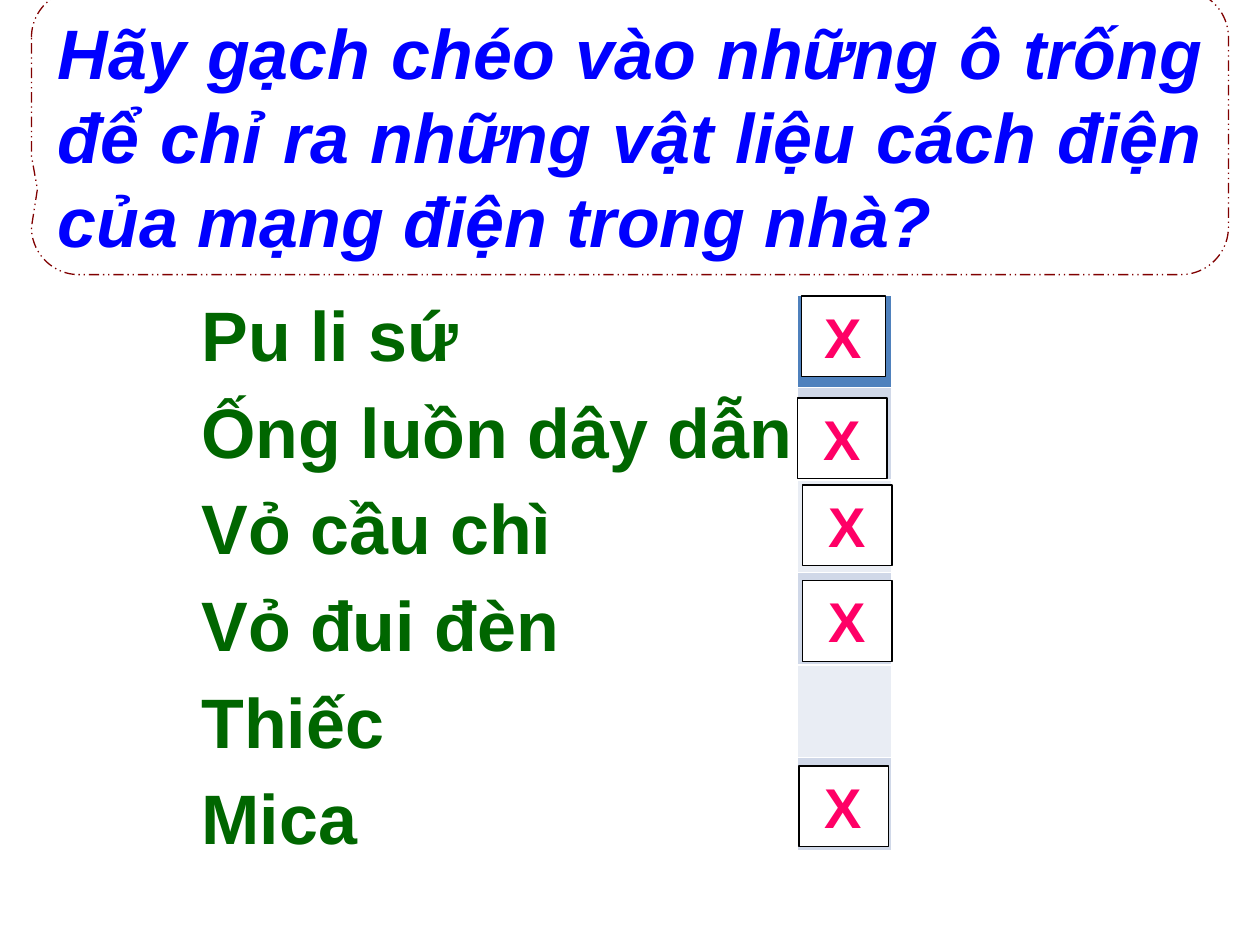
from pptx import Presentation
from pptx.dml.color import RGBColor
from pptx.enum.dml import MSO_LINE
from pptx.enum.shapes import MSO_SHAPE
from pptx.enum.text import MSO_ANCHOR, MSO_AUTO_SIZE, PP_ALIGN
from pptx.util import Inches, Pt

WHITE = RGBColor(0xFF, 0xFF, 0xFF)
BLACK = RGBColor(0, 0, 0)
MAROON = RGBColor(0x80, 0, 0)
BLUE = RGBColor(0, 0, 0xFF)
GREEN = RGBColor(0, 0x66, 0)
PINK = RGBColor(0xFF, 0, 0x66)
HEAD = RGBColor(0x4F, 0x81, 0xBD)
BANDS = [RGBColor(0xE9, 0xED, 0xF4), RGBColor(0xD0, 0xD8, 0xE8)]

QUESTION = ("Hãy gạch chéo vào những ô trống để chỉ ra những "
            "vật liệu cách điện của mạng điện trong nhà?")
ITEMS = ["Pu li sứ", "Ống luồn dây dẫn", "Vỏ cầu chì",
         "Vỏ đui đèn", "Thiếc", "Mica"]
# Left, top and width of each cross, measured from the answer column
CROSSES = [(0.03, 0.01, 0.67), (0, 0.82, 0.71), (0.04, 1.51, 0.71),
           (0.04, 2.27, 0.71), (0.01, 3.74, 0.71)]


def write(frame, text, size, color, align=PP_ALIGN.LEFT, italic=False):
    frame.text = text
    para = frame.paragraphs[0]
    para.alignment = align
    font = para.runs[0].font
    font.name, font.size, font.bold = "Arial", Pt(size), True
    font.italic = italic
    font.color.rgb = color


def add_box(slide, kind, box, line):
    shape = slide.shapes.add_shape(kind, *map(Inches, box))
    shape.shadow.inherit = False
    shape.fill.solid()
    shape.fill.fore_color.rgb = WHITE
    shape.line.color.rgb = line
    shape.line.width = Pt(0.75)
    shape.text_frame.word_wrap = True
    shape.text_frame.vertical_anchor = MSO_ANCHOR.TOP
    return shape


def add_grid(slide, box, widths):
    """Add a table with one equal row for each item."""
    grid = slide.shapes.add_table(len(ITEMS), len(widths),
                                  *map(Inches, box)).table
    for col, width in zip(grid.columns, widths):
        col.width = Inches(width)
    return grid


def add_question(slide, box):
    shape = add_box(slide, MSO_SHAPE.ROUNDED_RECTANGULAR_CALLOUT, box, MAROON)
    for i, value in enumerate((-0.495, 0.2, 0.167)):
        shape.adjustments[i] = value
    shape.line.dash_style = MSO_LINE.DASH_DOT_DOT
    write(shape.text_frame, QUESTION, 40, BLUE, PP_ALIGN.JUSTIFY, True)


def add_items(slide, box):
    grid = add_grid(slide, box, (5.05, 1.3))
    grid.first_row = grid.horz_banding = False
    for cell in grid.iter_cells():
        cell.fill.background()
    for row, item in enumerate(ITEMS):
        write(grid.cell(row, 0).text_frame, item, 40, GREEN)


def add_answers(slide, box):
    grid = add_grid(slide, box, (box[2],))
    for row, cell in enumerate(grid.iter_cells()):
        cell.fill.solid()
        cell.fill.fore_color.rgb = BANDS[row % 2] if row else HEAD
    left, top = box[:2]
    for dx, dy, width in CROSSES:
        cross = add_box(slide, MSO_SHAPE.RECTANGLE,
                        (left + dx, top + dy, width, 0.64), BLACK)
        write(cross.text_frame, "X", 32, PINK, PP_ALIGN.CENTER)
        cross.text_frame.auto_size = MSO_AUTO_SIZE.SHAPE_TO_FIT_TEXT


def main():
    deck = Presentation()
    deck.slide_width, deck.slide_height = Inches(10), Inches(7.5)
    slide = deck.slides.add_slide(deck.slide_layouts[6])
    add_question(slide, (0.25, -0.08, 9.5, 2.26))
    add_items(slide, (1.5, 2.32, 6.35, 4.6))
    add_answers(slide, (6.33, 2.34, 0.75, 4.41))
    deck.save("out.pptx")


if __name__ == "__main__":
    main()
